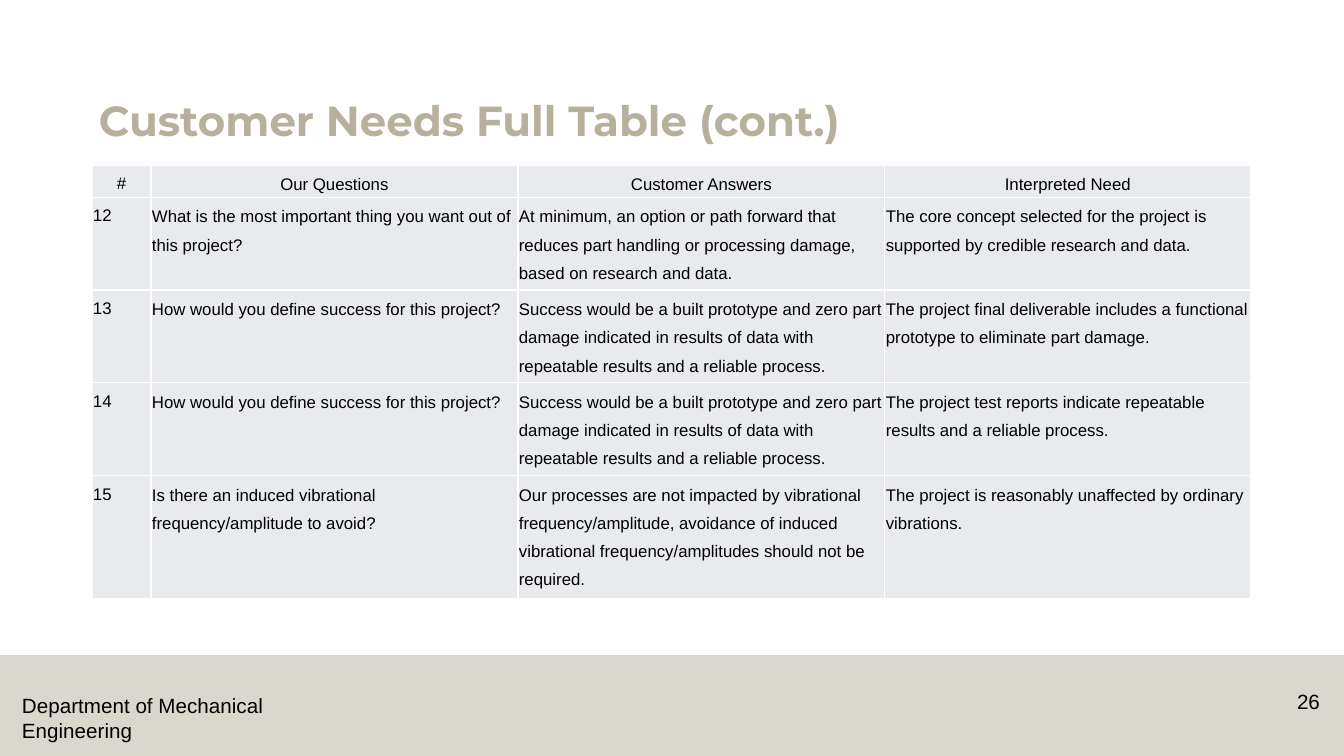
"""Build the customer needs table slide."""
from dataclasses import dataclass

from lxml import etree
from pptx import Presentation
from pptx.dml.color import RGBColor
from pptx.enum.shapes import MSO_SHAPE
from pptx.enum.text import MSO_ANCHOR, PP_ALIGN
from pptx.oxml.ns import qn
from pptx.util import Pt

RECT = MSO_SHAPE.RECTANGLE
TOP, BOTTOM = MSO_ANCHOR.TOP, MSO_ANCHOR.BOTTOM
LEFT, CENTER, RIGHT = PP_ALIGN.LEFT, PP_ALIGN.CENTER, PP_ALIGN.RIGHT

TITLE = "Customer Needs Full Table (cont.)"
FOOTER = "Department of Mechanical Engineering"
PAGE = "26"
SUCCESS = "How would you define success for this project?"
BUILT = (
    "Success would be a built prototype and zero part damage indicated in "
    "results of data with repeatable results and a reliable process."
)
ROWS = [
    ("#", "Our Questions", "Customer Answers", "Interpreted Need"),
    (
        "12",
        "What is the most important thing you want out of this project?",
        "At minimum, an option or path forward that reduces part handling or "
        "processing damage, based on research and data.",
        "The core concept selected for the project is supported by credible "
        "research and data.",
    ),
    (
        "13",
        SUCCESS,
        BUILT,
        "The project final deliverable includes a functional prototype to "
        "eliminate part damage.",
    ),
    (
        "14",
        SUCCESS,
        BUILT,
        "The project test reports indicate repeatable results and a reliable "
        "process.",
    ),
    (
        "15",
        "Is there an induced vibrational frequency/amplitude to avoid?",
        "Our processes are not impacted by vibrational frequency/amplitude, "
        "avoidance of induced vibrational frequency/amplitudes should not be "
        "required.",
        "The project is reasonably unaffected by ordinary vibrations.",
    ),
]

WIDE, HIGH = 1344, 756
BAND = 101
COLS = (59, 367, 367, 366)
HEIGHTS = (29, 87, 87, 87, 115)
SCALE = 12192000 / WIDE


@dataclass(frozen=True)
class Theme:
    """Colours, fonts and type sizes."""
    tan: str = "B7B09C"
    ink: str = "000000"
    cell: str = "E8EAEE"
    rule: str = "FFFFFF"
    body: str = "Arial"
    head: str = "Montserrat"
    big: float = 30
    mid: float = 14.7
    small: float = 12


THEME = Theme()


def px(size):
    return round(size * SCALE)


def style(para, size, name=THEME.body, color=THEME.ink, bold=False,
          align=LEFT, space=1.0):
    para.alignment = align
    para.line_spacing = space
    for run in para.runs:
        font = run.font
        font.size, font.name, font.bold = Pt(size), name, bold
        font.color.rgb = RGBColor.from_string(color)


def add_text(slide, text, box, inset, anchor, **look):
    frame = slide.shapes.add_textbox(*map(px, box)).text_frame
    frame.word_wrap = True
    frame.vertical_anchor = anchor
    frame.margin_left = frame.margin_right = px(inset[0])
    frame.margin_top = frame.margin_bottom = px(inset[1])
    frame.text = text
    style(frame.paragraphs[0], **look)


def add_band(slide):
    band = slide.shapes.add_shape(
        RECT, 0, px(HIGH - BAND), px(WIDE), px(BAND))
    band.shadow.inherit = False
    band.line.fill.background()
    band.fill.solid()
    band.fill.fore_color.rgb = RGBColor.from_string(THEME.tan)
    tint = band.fill._xPr.find(".//" + qn("a:srgbClr"))
    etree.SubElement(tint, qn("a:alpha"), val="50000")


def add_rules(cell):
    props = cell._tc.get_or_add_tcPr()
    for side in ("lnL", "lnR", "lnT", "lnB"):
        line = etree.SubElement(props, qn("a:" + side), w=str(Pt(1)))
        fill = etree.SubElement(line, qn("a:solidFill"))
        etree.SubElement(fill, qn("a:srgbClr"), val=THEME.rule)


def add_needs(slide):
    box = (92, 165, sum(COLS), sum(HEIGHTS))
    table = slide.shapes.add_table(
        len(ROWS), len(COLS), *map(px, box)).table
    for col, width in zip(table.columns, COLS):
        col.width = px(width)
    for r, (texts, height) in enumerate(zip(ROWS, HEIGHTS)):
        table.rows[r].height = px(height)
        for c, text in enumerate(texts):
            cell = table.cell(r, c)
            add_rules(cell)
            cell.fill.solid()
            cell.fill.fore_color.rgb = RGBColor.from_string(THEME.cell)
            cell.margin_left = cell.margin_right = px(1)
            cell.margin_top = cell.margin_bottom = px(1 if c else 0)
            cell.text = text
            style(cell.text_frame.paragraphs[0], THEME.small,
                  align=LEFT if r else CENTER, space=1.5)


def main():
    deck = Presentation()
    deck.slide_width, deck.slide_height = px(WIDE), px(HIGH)
    slide = deck.slides.add_slide(deck.slide_layouts[6])
    add_band(slide)
    add_text(slide, FOOTER, (12, 688, 362, 59), (10, 5), TOP, size=THEME.mid)
    add_text(slide, PAGE, (1252, 684, 78, 40), (10, 5), TOP,
             size=THEME.mid, align=RIGHT)
    add_text(slide, TITLE, (92, 40, 1159, 110), (7, 4), BOTTOM,
             size=THEME.big, name=THEME.head, color=THEME.tan, bold=True,
             space=0.9)
    add_needs(slide)
    deck.save("out.pptx")


if __name__ == "__main__":
    main()
